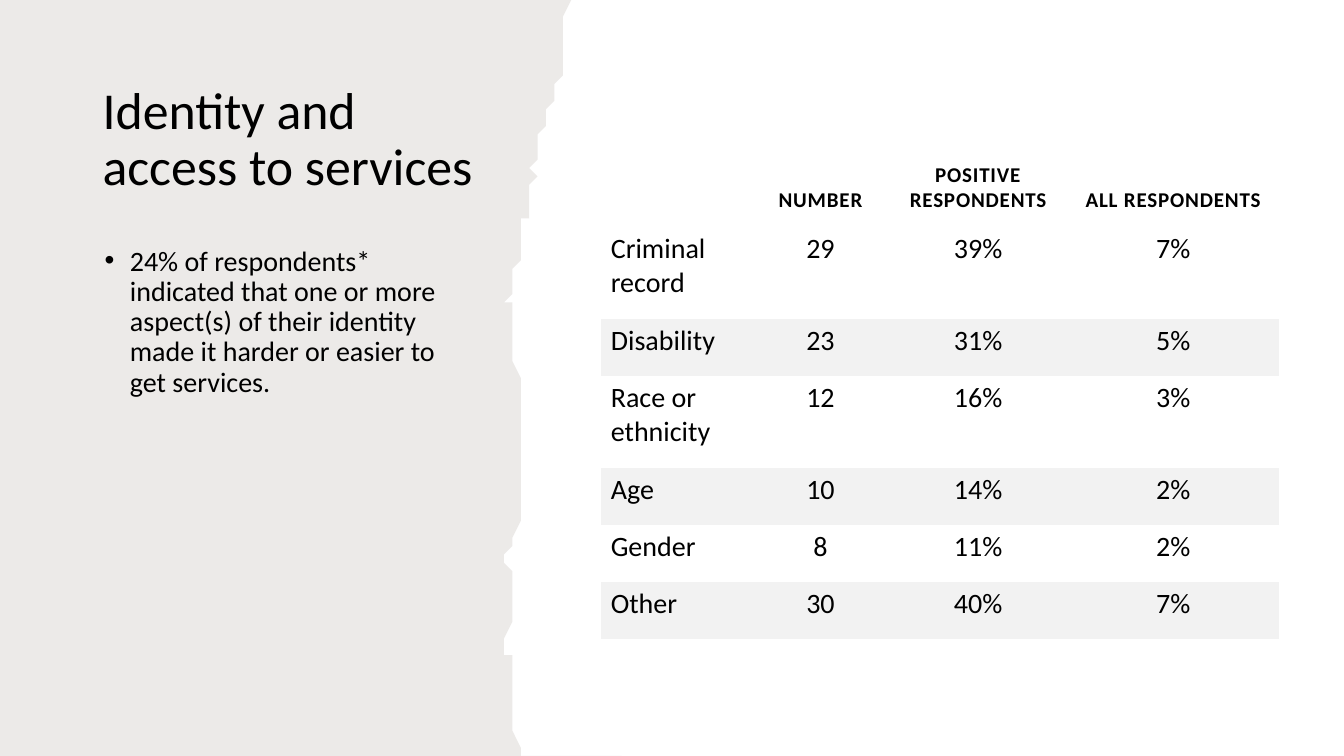
import pptx
import pptx.dml.color
import pptx.enum.text
import pptx.oxml.ns
import pptx.util
from lxml import etree

ALIGN = pptx.enum.text.PP_ALIGN
ANCHOR = pptx.enum.text.MSO_ANCHOR
COLORS = {"text": "000000", "panel": "82766A", "band": "F2F2F2"}
NO_STYLE_TABLE = "{2D5ABB26-0587-4C30-8999-92F81FD0307C}"
COLUMNS, ROWS = 160, 90

# Right edge of the torn paper from top to bottom, as (column, row)
TORN_EDGE = [
    (67.8, 0), (67.6, 0.2), (67.4, 1.7), (67.4, 4.7), (67.2, 6.2), (67.4, 7),
    (67.3, 7.7), (67.2, 7.9), (66.6, 9), (66.5, 9.5), (66.2, 9.8), (65.9, 10.7),
    (65.6, 11.6), (65, 12.8), (64.6, 13.9), (64.6, 15.2), (64.3, 15.8), (64.3, 17),
    (64, 17.9), (63.8, 18.5), (63.6, 18.7), (63.4, 19.9), (63.5, 20.8), (63.4, 21.6),
    (63.1, 22.6), (63.1, 24), (62.9, 24.5), (63.1, 25), (63.1, 25.6), (62.9, 25.8),
    (62.4, 26.5), (62.3, 27.7), (62.2, 28.8), (62.2, 29.6), (61.6, 30.6), (61.1, 31.6),
    (61, 32.8), (60.8, 34.1), (60.7, 34.6), (60.5, 35.6), (60.6, 36.1), (60.7, 36.8),
    (60.7, 39.1), (61.1, 40.2), (60.8, 40.7), (60.8, 41.8), (61.1, 42.7), (61, 43.1),
    (61.6, 44.8), (61.7, 46.3), (61.9, 46.8), (62, 48.6), (62.3, 49.6), (62.5, 50.9),
    (62.4, 53.2), (61.9, 55.3), (62, 57.8), (61.9, 59.5), (61.7, 60.7), (61.6, 62.2),
    (61.3, 63.6), (61.1, 64), (61, 64.7), (60.5, 65.8), (60.4, 67.1), (60.6, 68.4),
    (60.8, 71.8), (60.8, 73.4), (60.6, 74.4), (60.5, 75.7), (60.5, 77.5), (60.7, 78.4),
    (60.7, 81.7), (61.1, 83.6), (61.3, 85.8), (61.4, 87.1), (61.7, 88.7), (61.7, 89.8),
    (61.9, 90), (74.2, 90),
]

TABLE = [
    ["", "NUMBER", "POSITIVE RESPONDENTS", "ALL RESPONDENTS"],
    ["Criminal record", "29", "39%", "7%"],
    ["Disability", "23", "31%", "5%"],
    ["Race or ethnicity", "12", "16%", "3%"],
    ["Age", "10", "14%", "2%"],
    ["Gender", "8", "11%", "2%"],
    ["Other", "30", "40%", "7%"],
]


def rgb(name):
    return pptx.dml.color.RGBColor.from_string(COLORS[name])


class SlideBuilder:
    """Draws on one slide; lengths are grid columns and rows."""

    font = "Calibri"

    def __init__(self, deck):
        self.slide = deck.slides.add_slide(deck.slide_layouts[6])
        self.column = deck.slide_width / COLUMNS
        self.row = deck.slide_height / ROWS

    def across(self, columns):
        return pptx.util.Emu(round(columns * self.column))

    def down(self, rows):
        return pptx.util.Emu(round(rows * self.row))

    def place(self, left, top, width, height):
        return self.across(left), self.down(top), self.across(width), self.down(height)

    def add_span(self, para, text, size, bold=False, spacing=0):
        span = para.add_run()
        span.text = text
        span.font.name = self.font
        span.font.size = pptx.util.Pt(size)
        span.font.bold = bold
        span.font.color.rgb = rgb("text")
        if spacing:
            span.font._element.set("spc", str(round(spacing * 100)))

    def panel(self, points, color, opacity):
        """Fill a closed outline with a see-through colour."""
        builder = self.slide.shapes.build_freeform(0, 0, scale=(self.column, self.row))
        builder.add_line_segments(points, close=True)
        shape = builder.convert_to_shape()
        shape.shadow.inherit = False
        shape.line.fill.background()
        shape.fill.solid()
        shape.fill.fore_color.rgb = rgb(color)
        tint = shape._element.spPr.find(".//" + pptx.oxml.ns.qn("a:srgbClr"))
        etree.SubElement(tint, pptx.oxml.ns.qn("a:alpha"), val=str(opacity * 1000))

    def text(self, area, text, size, anchor=ANCHOR.TOP, bullet=None):
        box = self.slide.shapes.add_textbox(*self.place(*area))
        frame = box.text_frame
        frame.word_wrap = True
        frame.vertical_anchor = anchor
        para = frame.paragraphs[0]
        para.line_spacing = 0.9
        if bullet:
            indent = self.across(3)
            props = para._p.get_or_add_pPr()
            props.set("marL", str(indent))
            props.set("indent", str(-indent))
            etree.SubElement(props, pptx.oxml.ns.qn("a:buFont"), typeface="Arial")
            etree.SubElement(props, pptx.oxml.ns.qn("a:buChar"), char=bullet)
        self.add_span(para, text, size)

    def table(self, left, top, widths, heights, rows):
        area = self.place(left, top, sum(widths), sum(heights))
        frame = self.slide.shapes.add_table(len(rows), len(widths), *area)
        table = frame.table
        table.first_row = table.horz_banding = False
        table._tbl.tblPr.find(pptx.oxml.ns.qn("a:tableStyleId")).text = NO_STYLE_TABLE
        for column, width in zip(table.columns, widths):
            column.width = self.across(width)
        for row, height in zip(table.rows, heights):
            row.height = self.down(height)
        for r, row in enumerate(rows):
            for c, text in enumerate(row):
                self.cell(table.cell(r, c), text, r == 0, c == 0, r > 0 and r % 2 == 0)

    def cell(self, cell, text, is_header, is_label, is_banded):
        cell.margin_left = cell.margin_right = self.across(1.2)
        cell.margin_top = self.down(1.56 if is_header else 0.6)
        cell.margin_bottom = self.down(1.56)
        cell.vertical_anchor = ANCHOR.BOTTOM if is_header else ANCHOR.TOP
        if is_banded:
            cell.fill.solid()
            cell.fill.fore_color.rgb = rgb("band")
        else:
            cell.fill.background()
        para = cell.text_frame.paragraphs[0]
        para.alignment = ALIGN.LEFT if is_label else ALIGN.CENTER
        if text and is_header:
            self.add_span(para, text, 15, bold=True, spacing=0.6)
        elif text:
            self.add_span(para, text, 20)


def main():
    deck = pptx.Presentation()
    deck.slide_width = pptx.util.Inches(13.33)
    deck.slide_height = pptx.util.Inches(7.5)
    page = SlideBuilder(deck)
    page.panel(TORN_EDGE + [(0, ROWS)], "panel", opacity=15)
    page.text((11.04, 8.04, 49.08, 17.52), "Identity and access to services", 37,
              anchor=ANCHOR.MIDDLE)
    page.text((11.28, 28.8, 45, 51.24),
              "24% of respondents* indicated that one or more aspect(s) of their "
              "identity made it harder or easier to get services.", 20, bullet="•")
    tall, short = 10.96, 6.8
    page.table(71.52, 14.16, [18, 16.32, 21.24, 25.2],
               [12.84, tall, short, tall, short, short, short], TABLE)
    deck.save("out.pptx")


if __name__ == "__main__":
    main()
